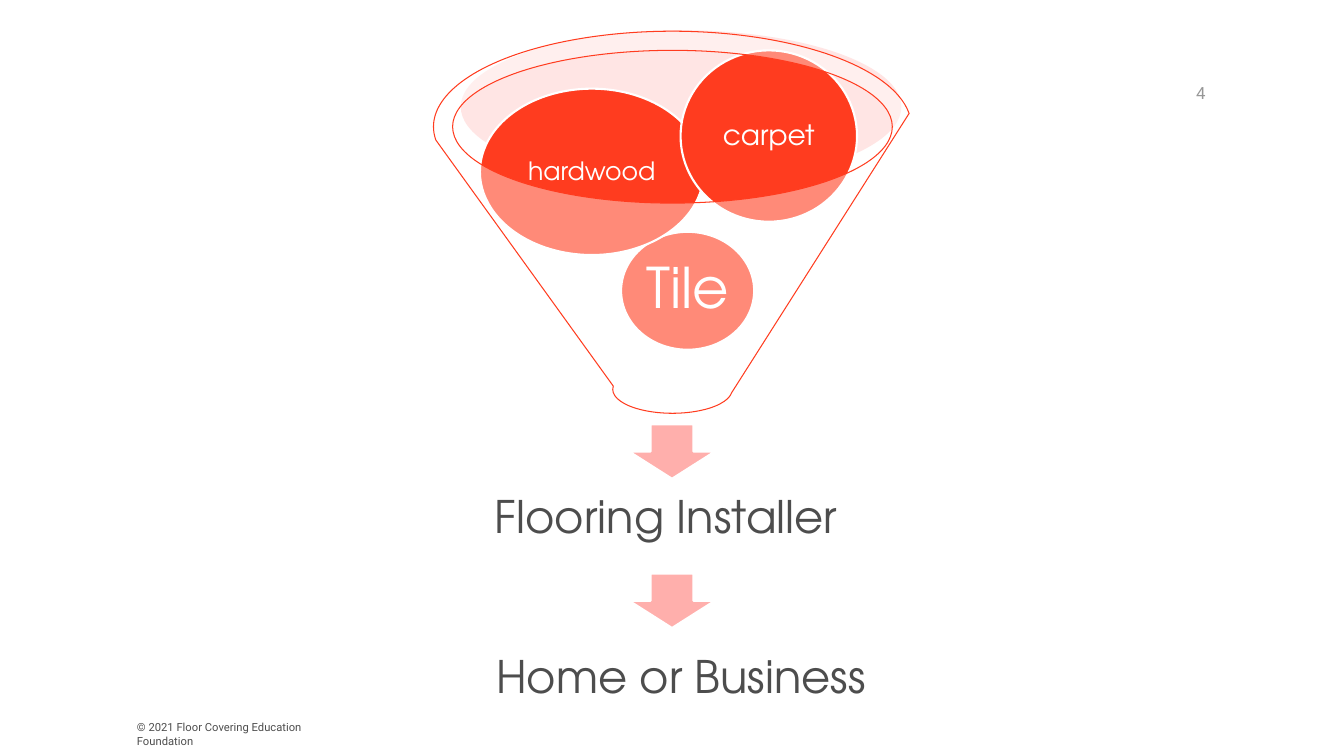
from dataclasses import dataclass
from lxml import etree
from pptx import Presentation
from pptx import util as u
from pptx.dml.color import RGBColor
from pptx.enum import shapes, text
from pptx.oxml import ns


@dataclass(frozen=True)
class Theme:
    head: str = "TeX Gyre Adventor"
    body: str = "Roboto"
    ink: str = "4D4D4D"
    mute: str = "979797"
    red: str = "FF3C1F"
    pink: str = "FFAFAC"
    rim: str = "FFC0BD"
    white: str = "FFFFFF"
    tile: int = 40
    big: int = 32
    carpet: int = 20
    wood: int = 18
    page: int = 12
    note: int = 8
    edge: float = 1.5
    thin: float = 0.75


THEME = Theme()
KIND = shapes.MSO_SHAPE
ALIGN = text.PP_ALIGN
ANCHOR = text.MSO_ANCHOR


def draw(slide, kind, box, fill, line=None, width=THEME.edge, alpha=None):
    shape = slide.shapes.add_shape(kind, *map(u.Inches, box))
    shape.shadow.inherit = False
    shape.fill.solid()
    shape.fill.fore_color.rgb = RGBColor.from_string(fill)
    if alpha is not None:
        color = shape.fill._xPr.find(ns.qn("a:solidFill"))[0]
        etree.SubElement(color, ns.qn("a:alpha"), val=str(alpha * 1000))
    if line:
        shape.line.color.rgb = RGBColor.from_string(line)
        shape.line.width = u.Pt(width)
    else:
        shape.line.fill.background()
    return shape


def write(shape, words, size, color, font=THEME.head, inset=0.25,
          align=ALIGN.CENTER, anchor=ANCHOR.MIDDLE, lead=0.9, wrap=True):
    frame = shape.text_frame
    frame.word_wrap = wrap
    frame.vertical_anchor = anchor
    frame.margin_left = frame.margin_right = u.Inches(inset)
    frame.margin_top = frame.margin_bottom = u.Inches(inset)
    para = frame.paragraphs[0]
    para.text = words
    para.alignment = align
    para.line_spacing = lead
    para.font.name = font
    para.font.size = u.Pt(size)
    para.font.color.rgb = RGBColor.from_string(color)
    return frame


def label(slide, box, *args, **style):
    return write(slide.shapes.add_textbox(*map(u.Inches, box)), *args, **style)


def funnel(slide, x, y, w, h):
    draw(slide, KIND.OVAL, (x + 0.27, y - 0.01, 4.37, 1.52), THEME.rim, alpha=40)
    balls = [
        ("Tile", THEME.tile, (1.86, 1.99, 1.32, 1.17)),
        ("hardwood", THEME.wood, (0.46, 0.57, 2.22, 1.65)),
        ("carpet", THEME.carpet, (2.45, 0.19, 1.75, 1.7)),
    ]
    for name, size, (dx, dy, bw, bh) in balls:
        ball = draw(slide, KIND.OVAL, (x + dx, y + dy, bw, bh),
                    THEME.red, THEME.white)
        write(ball, name, size, THEME.white, inset=0.03, wrap=False)
    draw(slide, KIND.FUNNEL, (x, y, w, h), THEME.white, THEME.red,
         THEME.thin, alpha=40)


def step(slide, x, y, words, box):
    draw(slide, KIND.DOWN_ARROW, (x, y, 0.85, 0.54), THEME.pink, THEME.white)
    dx, dy, w, h = box
    label(slide, (x + dx, y + dy, w, h), words, THEME.big, THEME.ink)


def footer(slide, x, y, w, h):
    frame = label(slide, (x, y, w, h),
                  "© 2021 Floor Covering Education Foundation",
                  THEME.note, THEME.ink, font=THEME.body, inset=0.1,
                  align=ALIGN.LEFT, anchor=ANCHOR.TOP, lead=1.0)
    frame.margin_top = frame.margin_bottom = u.Inches(0.05)
    frame.margin_right = u.Inches(0.5)


def number(slide, x, y, w, h):
    label(slide, (x, y, w, h), "4", THEME.page, THEME.mute,
          font=THEME.body, inset=0.1, lead=1.0)


def main():
    deck = Presentation()
    deck.slide_width = u.Inches(13.33)
    deck.slide_height = u.Inches(7.5)
    slide = deck.slides.add_slide(deck.slide_layouts[6])
    footer(slide, 1.26, 7.1, 2.36, 0.24)
    funnel(slide, 4.3, 0.31, 4.74, 3.79)
    number(slide, 11.45, 0.5, 0.92, 0.84)
    step(slide, 6.24, 4.21, "Flooring Installer ", (-1.6, 0.43, 4.06, 1.02))
    step(slide, 6.24, 5.69, "Home or Business", (-2.37, 0.54, 5.77, 1.02))
    deck.save("out.pptx")


if __name__ == "__main__":
    main()
